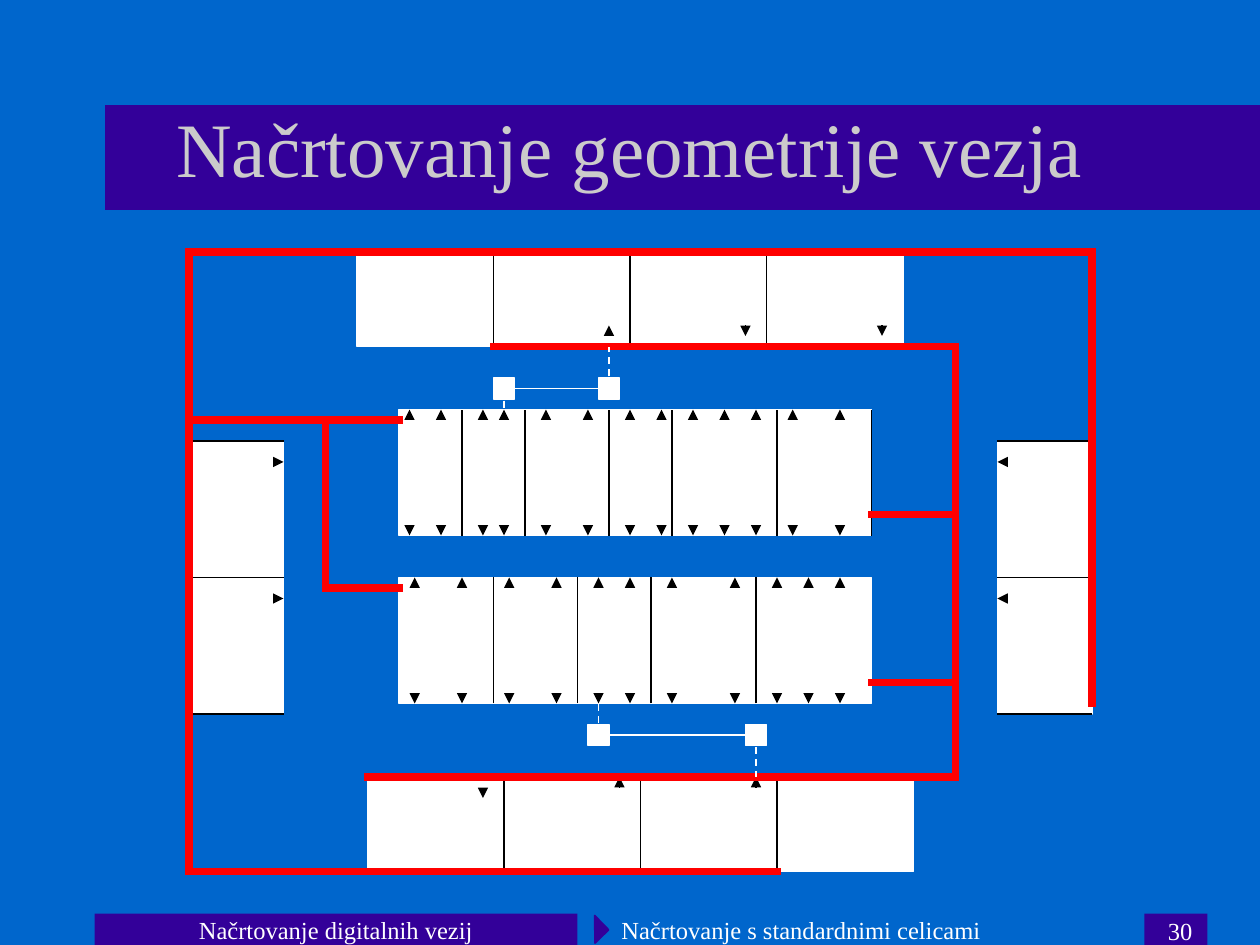
from lxml import etree
from pptx import Presentation
from pptx import util as u
from pptx.dml.color import RGBColor
from pptx.enum import dml, shapes, text
from pptx.oxml import ns

BLUE = RGBColor(0x00, 0x66, 0xCC)
PURPLE = RGBColor(0x33, 0x00, 0x99)
GREY = RGBColor(0xCB, 0xCB, 0xCB)
WHITE = RGBColor(0xFF, 0xFF, 0xFF)
BLACK = RGBColor(0x00, 0x00, 0x00)
RED = RGBColor(0xFF, 0x00, 0x00)
FONT = "Times New Roman"
COLS, ROWS = 240, 180
UNIT = u.Inches(10) / COLS
PIN = 2


def grid(*values):
    """Turn grid units into EMU lengths."""
    return [u.Emu(round(v * UNIT)) for v in values]


def block(s, box, color, kind=shapes.MSO_SHAPE.RECTANGLE, edge=True):
    """Place a plain filled shape in the box."""
    sp = s.shapes.add_shape(kind, *grid(*box))
    sp.shadow.inherit = False
    sp.fill.solid()
    sp.fill.fore_color.rgb = color
    if edge:
        sp.line.color.rgb = color
        sp.line.width = u.Pt(1)
    else:
        sp.line.fill.background()
    return sp


def line(s, ends, color=BLACK, width=1, dash=False, head=False, square=False):
    """Draw a straight line through the ends x1, y1, x2, y2."""
    c = s.shapes.add_connector(shapes.MSO_CONNECTOR.STRAIGHT, *grid(*ends))
    c.line.color.rgb = color
    c.line.width = u.Pt(width)
    if dash:
        c.line.dash_style = dml.MSO_LINE.DASH
    ln = c.line._get_or_add_ln()
    if head:
        etree.SubElement(ln, ns.qn("a:headEnd"), type="triangle")
    if square:
        ln.set("cap", "sq")
    etree.SubElement(c._element.spPr, ns.qn("a:effectLst"))


def label(s, box, words, size, color, align, anchor=text.MSO_ANCHOR.MIDDLE):
    """Write one line of text in the box."""
    tf = s.shapes.add_textbox(*grid(*box)).text_frame
    tf.word_wrap = True
    tf.vertical_anchor = anchor
    tf.text = words
    p = tf.paragraphs[0]
    p.alignment = align
    f = p.runs[0].font
    f.name, f.size, f.color.rgb = FONT, u.Pt(size), color


def title(s, box):
    """Place the title bar and its heading."""
    x, y, w, h = box
    block(s, box, PURPLE, edge=False)
    label(s, (x - 2, y - 5, w - 16, h + 6), "Načrtovanje geometrije vezja",
          44, GREY, text.PP_ALIGN.CENTER)


def footer(s, box):
    """Place the footer bars, marker, captions and page number."""
    x, y, w, h = box
    block(s, (x, y, 92, h), PURPLE, edge=False)
    block(s, (x + w - 12, y, 12, h), PURPLE, edge=False)
    mark = block(s, (x + 93.4, y + 1.2, 3.8, 3.6), PURPLE, shapes.MSO_SHAPE.RIGHT_TRIANGLE)
    mark.rotation = 225.8
    label(s, (x, y - 1, 92, 8), "Načrtovanje digitalnih vezij", 14, WHITE, text.PP_ALIGN.CENTER)
    label(s, (x + 98, y - 1, 92, 8), "Načrtovanje s standardnimi celicami",
          14, WHITE, text.PP_ALIGN.LEFT)
    label(s, (x + w - 50.5, y - 0.7, 50, h), "30", 14, WHITE,
          text.PP_ALIGN.RIGHT, text.MSO_ANCHOR.TOP)


def cell_row(s, box, cuts, pins):
    """Place a row of standard cells with pins along both edges."""
    x, y, w, h = box
    block(s, box, WHITE)
    for cut in cuts:
        line(s, (x + cut, y + h, x + cut, y))
    for pin in pins:
        line(s, (x + pin, y, x + pin, y + PIN), head=True)
        line(s, (x + pin, y + h, x + pin, y + h - PIN), head=True)


def pad_row(s, box, count, pins):
    """Place a row of pads, with pins given as column, tip and end."""
    x, y, w, h = box
    step = w / count
    block(s, box, WHITE)
    for i in range(1, count):
        line(s, (x + i * step, y, x + i * step, y + h))
    for col, tip, end in pins:
        line(s, (x + col, y + tip, x + col, y + end), head=True)


def pad_column(s, box, count, tip, end):
    """Place a column of pads, each with a pin near its top."""
    x, y, w, h = box
    step = h / count
    block(s, box, WHITE)
    for i in range(count + 1):
        line(s, (x, y + i * step, x + w, y + i * step))
    for i in range(count):
        row = y + i * step + 4
        line(s, (x + tip, row, x + end, row), head=True)


def power(s, box):
    """Draw the supply wires around and between the cells."""
    x, y, w, h = box
    wires = [(0, 0, w, 0), (0, h, 112, h), (0, h, 0, 0), (w, 86, w, 0),
             (0, 32, 40, 32), (26, 64, 26, 32), (26, 64, 40, 64),
             (34, 100, 146, 100), (146, 100, 146, 18), (58, 18, 146, 18),
             (130, 82, 146, 82), (130, 50, 146, 50)]
    for x1, y1, x2, y2 in wires:
        line(s, (x + x1, y + y1, x + x2, y + y2), RED, 4.5, square=True)


def net(s, box, level, left, right):
    """Draw a signal net: a level wire, two vias and their dashed stubs."""
    x, y, w, h = box
    row = y + level
    line(s, (x, row, x + w, row), WHITE)
    for col, end in ((x, left), (x + w, right)):
        line(s, (col, row, col, y + end), WHITE, dash=True)
        block(s, (col - 2, row - 2, 4, 4), WHITE)


def main():
    """Build the slide and save it."""
    prs = Presentation()
    prs.slide_width, prs.slide_height = grid(COLS, ROWS)
    s = prs.slides.add_slide(prs.slide_layouts[6])
    s.background.fill.solid()
    s.background.fill.fore_color.rgb = BLUE
    footer(s, (18, 174, 212, 6))
    title(s, (20, 20, 220, 20))
    cell_row(s, (76, 78, 90, 24), (12, 24, 40, 52, 72, 90),
             (2, 8, 16, 20, 28, 36, 44, 50, 56, 62, 68, 75, 84))
    cell_row(s, (76, 110, 90, 24), (18, 34, 48, 68),
             (3, 12, 21, 30, 38, 44, 52, 64, 72, 78, 84))
    pad_row(s, (68, 48, 104, 18), 4, ((48, 14, 16), (74, 16, 14), (100, 16, 14)))
    pad_row(s, (70, 148, 104, 18), 4, ((22, 4, 2), (48, 0, 2), (74, 0, 2)))
    pad_column(s, (36, 84, 18, 52), 2, 18, 16)
    pad_column(s, (190, 84, 18, 52), 2, 0, 2)
    power(s, (36, 48, 172, 118))
    net(s, (96, 66, 20, 12), 8, 12, 0)
    net(s, (114, 134, 30, 14), 6, 0, 14)
    prs.save("out.pptx")


if __name__ == "__main__":
    main()
